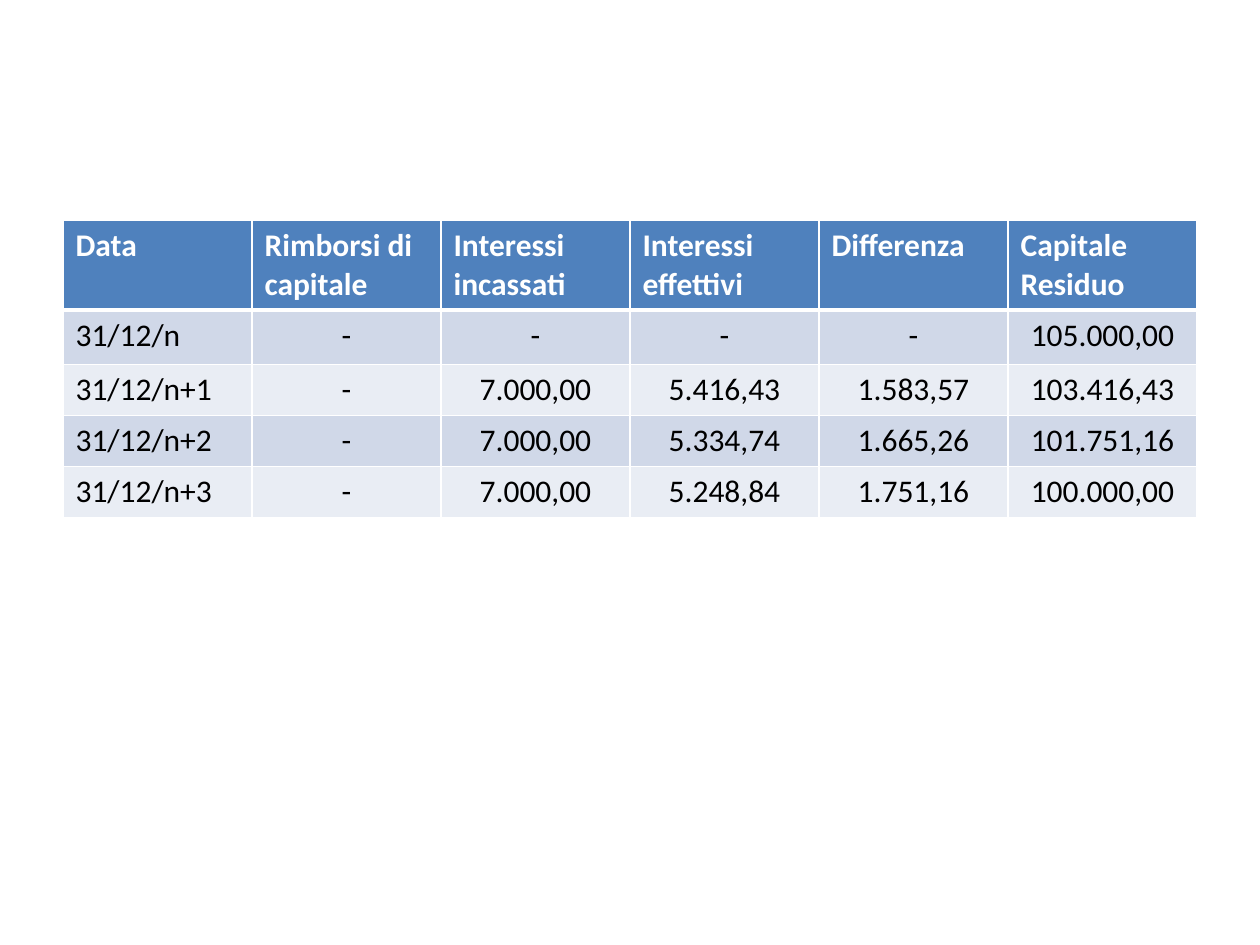
"""Build a slide with the amortised cost table of a loan."""
from dataclasses import dataclass

from lxml import etree
from pptx import Presentation
from pptx.dml.color import RGBColor
from pptx.enum import text
from pptx.oxml import ns
from pptx.util import Pt


@dataclass(frozen=True)
class Theme:
    font: str = "Calibri"
    size: int = 18
    header: str = "4F81BD"
    bands: tuple = ("D0D8E8", "E9EDF4")
    light: str = "FFFFFF"
    dark: str = "000000"
    thin: int = 1
    thick: int = 3


theme = Theme()


def add_border(cell, side, width):
    line = etree.SubElement(cell._tc.get_or_add_tcPr(), ns.qn(f"a:{side}"), w=str(Pt(width)))
    fill = etree.SubElement(line, ns.qn("a:solidFill"))
    etree.SubElement(fill, ns.qn("a:srgbClr"), val=theme.light)


rows = [
    ["Data", "Rimborsi di\ncapitale", "Interessi\nincassati", "Interessi\neffettivi",
     "Differenza", "Capitale\nResiduo"],
    ["31/12/n", "-", "-", "-", "-", "105.000,00"],
    ["31/12/n+1", "-", "7.000,00", "5.416,43", "1.583,57", "103.416,43"],
    ["31/12/n+2", "-", "7.000,00", "5.334,74", "1.665,26", "101.751,16"],
    ["31/12/n+3", "-", "7.000,00", "5.248,84", "1.751,16", "100.000,00"],
]
heights = [50.4, 31, 29.2, 29.2, 29.2]

deck = Presentation()
deck.slide_width, deck.slide_height = Pt(720), Pt(540)
page = deck.slides.add_slide(deck.slide_layouts[6])
table = page.shapes.add_table(
    len(rows), len(rows[0]), Pt(36), Pt(126), Pt(648), Pt(sum(heights))
).table

for column in table.columns:
    column.width = Pt(108)

for row_number, (values, height) in enumerate(zip(rows, heights)):
    table.rows[row_number].height = Pt(height)
    is_header = row_number == 0
    fill_color = theme.header if is_header else theme.bands[(row_number - 1) % 2]
    top = theme.thick if row_number == 1 else theme.thin
    bottom = theme.thick if is_header else theme.thin
    for column_number, value in enumerate(values):
        cell = table.cell(row_number, column_number)
        for side, width in (("lnL", theme.thin), ("lnR", theme.thin), ("lnT", top), ("lnB", bottom)):
            add_border(cell, side, width)
        cell.fill.solid()
        cell.fill.fore_color.rgb = RGBColor.from_string(fill_color)
        for line_number, wording in enumerate(value.split("\n")):
            frame = cell.text_frame
            para = frame.add_paragraph() if line_number else frame.paragraphs[0]
            centred = not is_header and column_number > 0
            para.alignment = text.PP_ALIGN.CENTER if centred else text.PP_ALIGN.LEFT
            span = para.add_run()
            span.text = wording
            span.font.name = theme.font
            span.font.size = Pt(theme.size)
            span.font.bold = is_header
            span.font.color.rgb = RGBColor.from_string(theme.light if is_header else theme.dark)

deck.save("out.pptx")
